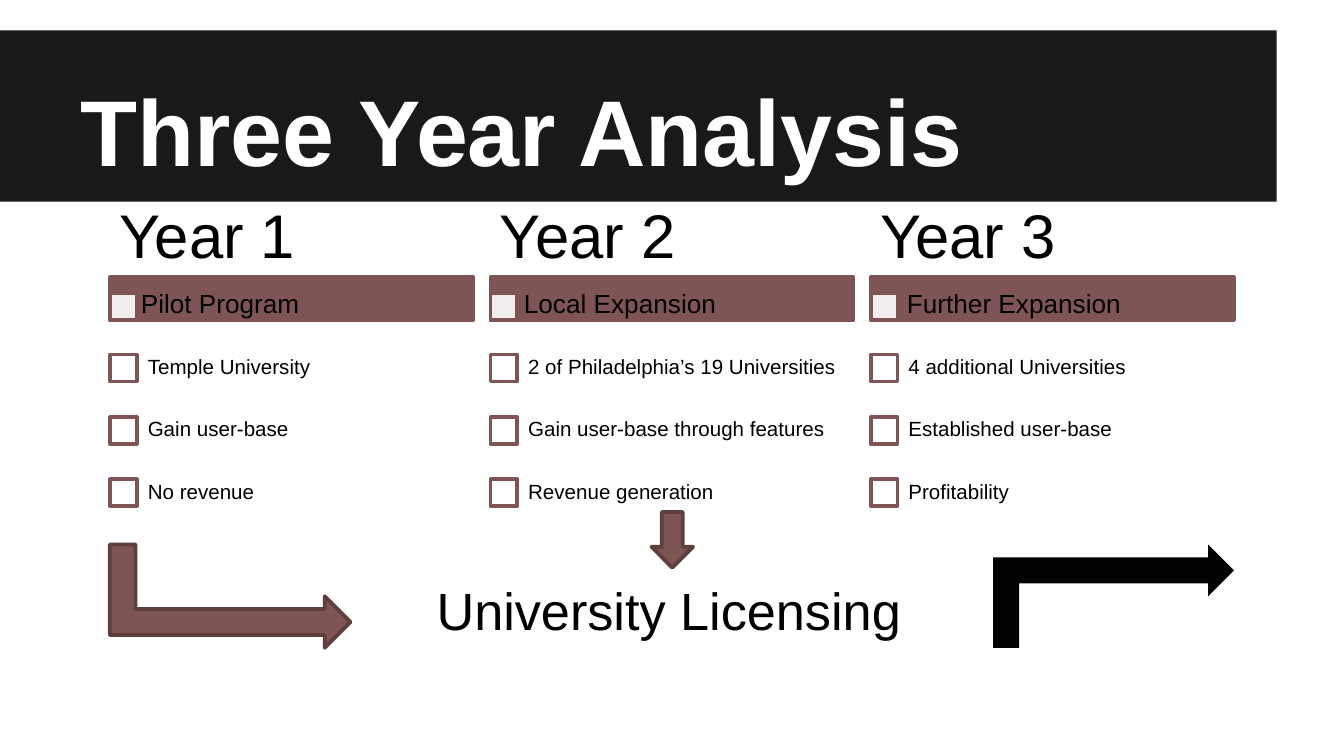
from lxml.etree import SubElement
from pptx import Presentation
from pptx.dml.color import RGBColor
from pptx.enum.shapes import MSO_SHAPE
from pptx.enum.text import MSO_ANCHOR, MSO_AUTO_SIZE, PP_ALIGN
from pptx.oxml.ns import qn
from pptx.util import Pt

WHITE = RGBColor(0xFF, 0xFF, 0xFF)
BLACK = RGBColor(0, 0, 0)
DARK = RGBColor(0x19, 0x19, 0x19)
MAUVE = RGBColor(0x7E, 0x55, 0x54)
BROWN = RGBColor(0x5D, 0x3F, 0x3E)

LEFT, PITCH, WIDTH = 59, 203.75, 194.5
ROW, STEP, BOX = 190, 33.4, 14.4
YEARS = [
    ("Year 1", "Pilot Program",
     ["Temple University", "Gain user-base", "No revenue"]),
    ("Year 2", "Local Expansion",
     ["2 of Philadelphia’s 19 Universities",
      "Gain user-base through features", "Revenue generation"]),
    ("Year 3", "Further Expansion",
     ["4 additional Universities", "Established user-base", "Profitability"]),
]


def put(obj, values):
    """Set each named attribute of obj."""
    for name, value in values.items():
        setattr(obj, name, value)


def write(shape, text, size, color=BLACK, bold=False, inset=(7.2, 3.6),
          anchor=MSO_ANCHOR.MIDDLE, spacing=None):
    """Fill a shape with one left-aligned paragraph."""
    frame = shape.text_frame
    across, down = map(Pt, inset)
    put(frame, {"text": text, "word_wrap": True,
                "auto_size": MSO_AUTO_SIZE.NONE, "vertical_anchor": anchor,
                "margin_left": across, "margin_right": across,
                "margin_top": down, "margin_bottom": down})
    para = frame.paragraphs[0]
    put(para, {"alignment": PP_ALIGN.LEFT, "line_spacing": spacing})
    put(para.runs[0].font, {"name": "Arial", "size": Pt(size), "bold": bold})
    para.runs[0].font.color.rgb = color


def label(shapes, area, text, size, **style):
    write(shapes.add_textbox(*map(Pt, area)), text, size, **style)


def draw(shapes, kind, area, fill, line=None):
    shape = shapes.add_shape(kind, *map(Pt, area))
    shape.shadow.inherit = False
    shape.fill.solid()
    shape.fill.fore_color.rgb = fill
    if line is None:
        shape.line.fill.background()
    else:
        shape.line.color.rgb = line
        shape.line.width = Pt(2)
    return shape


def fade(shape, percent):
    """Give a solid fill the stated opacity."""
    color = shape.fill._xPr.find(qn("a:solidFill"))[0]
    SubElement(color, qn("a:alpha")).set("val", str(percent * 1000))


def head(slide):
    band = draw(slide.shapes, MSO_SHAPE.RECTANGLE, (0, 16.3, 684, 91.7), DARK)
    title = slide.shapes.title
    title._element.addprevious(band._element)
    put(title, {"left": Pt(36), "top": Pt(16.5),
                "width": Pt(648), "height": Pt(90)})
    write(title, "Three Year Analysis", 50, color=WHITE, bold=True,
          inset=(7.2, 7.2), anchor=MSO_ANCHOR.BOTTOM)


def column(slide, left, year, items):
    """Draw one year with its bar and check list."""
    shapes = slide.shapes.add_group_shape().shapes
    rect = MSO_SHAPE.RECTANGLE
    draw(shapes, rect, (left, 148.5, WIDTH, 22.9), MAUVE, MAUVE)
    fade(draw(shapes, rect, (left, 157, BOX, BOX), WHITE, MAUVE), 90)
    label(shapes, (left, 107.3, WIDTH, 41), year, 33,
          inset=(5, 3.6), spacing=0.9)
    for row, item in enumerate(items):
        top = ROW + row * STEP
        draw(shapes, rect, (left, top, BOX, BOX), WHITE, MAUVE)
        label(shapes, (left + 13.7, top - 9.4, WIDTH - 13.7, 33), item, 11,
              inset=(6.5, 6.5), spacing=0.9)


def arrows(slide):
    shapes = slide.shapes
    bent = MSO_SHAPE.BENT_UP_ARROW
    down = draw(shapes, bent, (95.6, 254.9, 55.4, 129), MAUVE, BROWN)
    draw(shapes, MSO_SHAPE.DOWN_ARROW, (349, 274.3, 22.3, 29.8), MAUVE, BROWN)
    rise = draw(shapes, bent, (568.9, 254.9, 55.4, 129), BLACK)
    down.rotation = rise.rotation = 90
    rise._element.spPr.xfrm.set("flipH", "1")


def main():
    deck = Presentation()
    put(deck, {"slide_width": Pt(720), "slide_height": Pt(405)})
    slide = deck.slides.add_slide(deck.slide_layouts[5])
    head(slide)
    for col, (year, stage, items) in enumerate(YEARS):
        column(slide, LEFT + col * PITCH, year, items)
    for col, (year, stage, items) in enumerate(YEARS):
        label(slide.shapes, (68.4 + col * 205.2, 150.7, 198.7, 24.2),
              stage, 14, anchor=MSO_ANCHOR.TOP)
    arrows(slide)
    label(slide.shapes, (226.8, 306, 267, 41), "University Licensing", 28,
          anchor=MSO_ANCHOR.TOP)
    deck.save("out.pptx")


if __name__ == "__main__":
    main()
